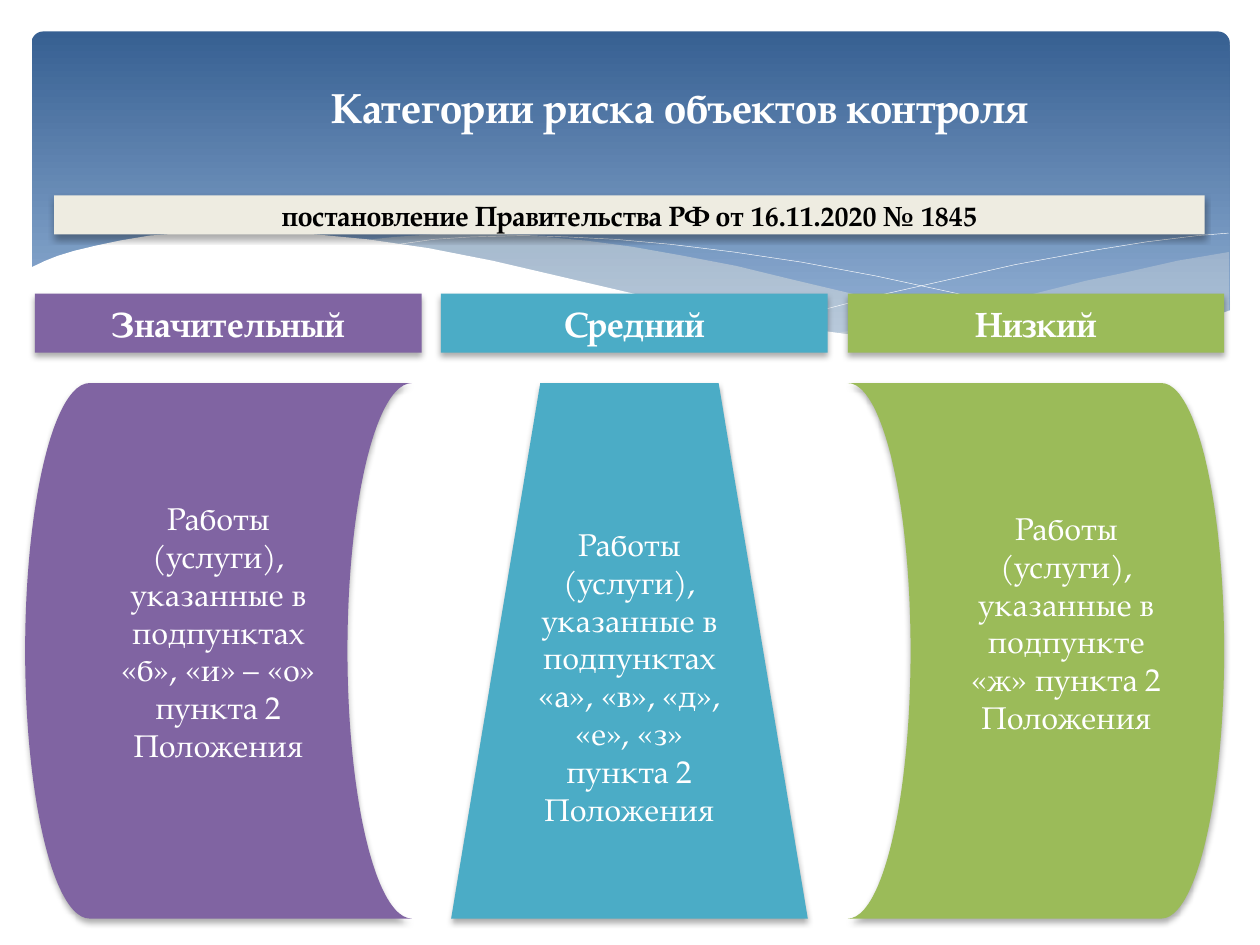
from dataclasses import dataclass

import pptx
import pptx.dml.color
import pptx.enum.shapes
import pptx.enum.text
import pptx.oxml
import pptx.oxml.ns
import pptx.util

Pt = pptx.util.Pt
SHAPE = pptx.enum.shapes.MSO_SHAPE
ANCHOR = pptx.enum.text.MSO_ANCHOR
Point = tuple[float, float]

FONT = "TeX Gyre Pagella"
COLORS = {
    "sky_top": "376092", "sky_bottom": "95B3D7", "cream": "EEECE1",
    "white": "FFFFFF", "black": "000000",
    "purple": "8064A2", "teal": "4BACC6", "green": "9BBB59",
}
BLANK_LINE = 22  # extra bottom inset that lifts the body text


@dataclass
class Box:
    left: float
    top: float
    width: float
    height: float

    def emu(self) -> list[int]:
        return [Pt(v) for v in (self.left, self.top, self.width, self.height)]


@dataclass
class Risk:
    heading: str
    color: str
    heading_left: float
    body_left: float
    heading_width: float
    body_width: float
    outline: int
    body: list[str]
    rotation: int = 0


@dataclass
class Wave:
    points: list[Point]
    color: str
    opacity: int = 100
    filled: bool = True


RISKS = [
    Risk("Средний", "teal", 252, 257.8, 221, 203.8, SHAPE.TRAPEZOID,
         ["Работы (услуги), указанные в подпунктах «а», «в», «д», «е», «з» пункта 2 Положения"]),
    Risk("Низкий", "green", 484.5, 484.5, 215, 215, SHAPE.FLOWCHART_STORED_DATA, [], 180),
    Risk("Значительный", "purple", 20, 14.4, 221, 221, SHAPE.FLOWCHART_STORED_DATA,
         ["Работы (услуги), указанные в подпунктах «б», «и» – «о»", "пункта 2 Положения"]),
]
LOW_RISK_TEXT = "Работы (услуги), указанные в подпункте «ж» пункта 2 Положения"

WAVES = [
    Wave([(702.5, 144), (673, 149), (642, 156), (620, 160.6), (580, 170.6), (542, 178.6),
          (508, 185), (476, 190.8), (508, 195), (536, 198), (562, 199.5), (586, 200),
          (608, 199.5), (628, 198), (646, 195.5), (663, 190.8), (678, 186.5), (702.5, 177.8)],
         "cream", 29),
    Wave([(643, 196.5), (602.6, 190.8), (558, 182.9), (508, 172.8), (453, 159.8),
          (420.5, 151.9), (389.5, 146), (361.4, 141), (334.8, 137.5), (302.4, 134.6),
          (273.6, 133.2), (247.7, 133.9), (225.4, 135.4), (206, 137.5), (232.6, 141),
          (260.6, 146), (290.9, 151.9), (323.3, 159.8), (381.6, 172.8), (432.7, 183.6),
          (478.8, 191.5), (520, 197.3), (556.6, 200), (596, 200), (630.7, 198.7)],
         "cream", 40),
    Wave([(222.5, 140.4), (247.7, 136.8), (269.3, 135.4), (299.5, 134.6), (324, 135.4),
          (352, 136.8), (383.8, 139.7), (419, 144), (458, 149.8), (500.4, 157.7),
          (547.2, 167.8), (598.3, 180.7), (653, 195.8)], "white", filled=False),
    Wave([(441.4, 185), (470, 177.1), (500.4, 169.2), (538.6, 160.6), (580.3, 151.2),
          (623.5, 143.3), (655.2, 138.2), (684.7, 134.6), (702, 133.2)],
         "white", filled=False),
    Wave([(703.4, 177.1), (684, 184.3), (662.4, 190.8), (638.6, 195.1), (612, 198),
          (582.5, 199.4), (548, 198), (509.8, 194.4), (466.6, 188.6), (416.9, 180),
          (362, 167.8), (321.8, 158.4), (281.5, 149), (244.8, 141.8), (210.2, 136.8),
          (180, 133.9), (152, 132.5), (127.4, 132.5), (105, 133.2), (85.7, 134.6),
          (68.4, 137.5), (54.7, 140.4), (42.5, 143.3), (33, 146.2), (25.9, 149),
          (16.6, 153.4), (16.6, 236.9), (703.4, 236.9)], "white"),
]


def rgb(name: str) -> pptx.dml.color.RGBColor:
    return pptx.dml.color.RGBColor.from_string(COLORS[name])


def write(shape, lines: list[str], size: float, color: str = "white",
          bold: bool = False, anchor=ANCHOR.MIDDLE) -> None:
    frame = shape.text_frame
    frame.text = "\n".join(lines)
    frame.word_wrap = True
    frame.vertical_anchor = anchor
    for paragraph in frame.paragraphs:
        paragraph.alignment = pptx.enum.text.PP_ALIGN.CENTER
        font = paragraph.font
        font.name, font.size, font.bold = FONT, Pt(size), bold
        font.color.rgb = rgb(color)


def add_shadowed(slide, outline: int, box: Box, color: str):
    shape = slide.shapes.add_shape(outline, *box.emu())
    shape.fill.solid()
    shape.fill.fore_color.rgb = rgb(color)
    shape.line.fill.background()
    shape.shadow.inherit = False
    effects = shape._element.spPr.find(pptx.oxml.ns.qn("a:effectLst"))
    effects.append(pptx.oxml.parse_xml(
        f'<a:outerShdw {pptx.oxml.ns.nsdecls("a")} blurRad="{Pt(3.5)}" dist="{Pt(2.2)}" '
        f'dir="5400000" rotWithShape="0"><a:srgbClr val="{COLORS["black"]}">'
        '<a:alpha val="32000"/></a:srgbClr></a:outerShdw>'))
    return shape


def add_wave(slide, wave: Wave) -> None:
    start, *rest = [(Pt(x), Pt(y)) for x, y in wave.points]
    builder = slide.shapes.build_freeform(*start)
    builder.add_line_segments(rest, close=wave.filled)
    shape = builder.convert_to_shape()
    shape.shadow.inherit = False
    if not wave.filled:
        shape.fill.background()
        shape.line.color.rgb = rgb(wave.color)
        shape.line.width = Pt(0.25)
        return
    shape.line.fill.background()
    shape.fill.solid()
    shape.fill.fore_color.rgb = rgb(wave.color)
    if wave.opacity < 100:
        color = shape._element.spPr.find(".//" + pptx.oxml.ns.qn("a:srgbClr"))
        color.append(pptx.oxml.parse_xml(
            f'<a:alpha {pptx.oxml.ns.nsdecls("a")} val="{wave.opacity * 1000}"/>'))


def add_sky(slide) -> None:
    sky = slide.shapes.add_shape(SHAPE.ROUNDED_RECTANGLE, *Box(18, 18, 684.7, 194.4).emu())
    sky.adjustments[0] = 0.034
    sky.shadow.inherit = False
    sky.line.fill.background()
    sky.fill.gradient()
    sky.fill.gradient_angle = 270
    stops = [("sky_top", 0), ("sky_bottom", 0.9)]
    for stop, (color, position) in zip(sky.fill.gradient_stops, stops):
        stop.color.rgb = rgb(color)
        stop.position = position


def main() -> None:
    deck = pptx.Presentation()
    deck.slide_width, deck.slide_height = Pt(720), Pt(540)
    slide = deck.slides.add_slide(deck.slide_layouts[5])

    # Backdrop
    add_sky(slide)
    for wave in WAVES:
        add_wave(slide, wave)

    # Decree banner
    decree = add_shadowed(slide, SHAPE.RECTANGLE, Box(31, 111.6, 657.4, 22.3), "cream")
    write(decree, ["постановление Правительства РФ от 16.11.2020 № 1845"], 16, "black", True)

    # Risk categories
    for risk in RISKS:
        heading = add_shadowed(slide, SHAPE.RECTANGLE,
                               Box(risk.heading_left, 167.8, risk.heading_width, 33.8), risk.color)
        write(heading, [risk.heading], 20, bold=True)
        body = add_shadowed(slide, risk.outline,
                            Box(risk.body_left, 218.9, risk.body_width, 306), risk.color)
        body.rotation = risk.rotation
        if risk.body:
            write(body, risk.body, 18)
            body.text_frame.margin_bottom = Pt(3.6 + BLANK_LINE)

    # Upright text over the rotated shape
    low_risk = slide.shapes.add_textbox(*Box(541.4, 287.3, 136, 138.2).emu())
    write(low_risk, [LOW_RISK_TEXT], 18, anchor=ANCHOR.TOP)

    # Title, brought in front of the backdrop
    title = slide.shapes.title
    title.left, title.top, title.width, title.height = Box(133.2, 43.2, 510.5, 36).emu()
    write(title, ["Категории риска объектов контроля"], 24, bold=True, anchor=ANCHOR.TOP)
    slide.shapes._spTree.append(title._element)

    deck.save("out.pptx")


if __name__ == "__main__":
    main()
